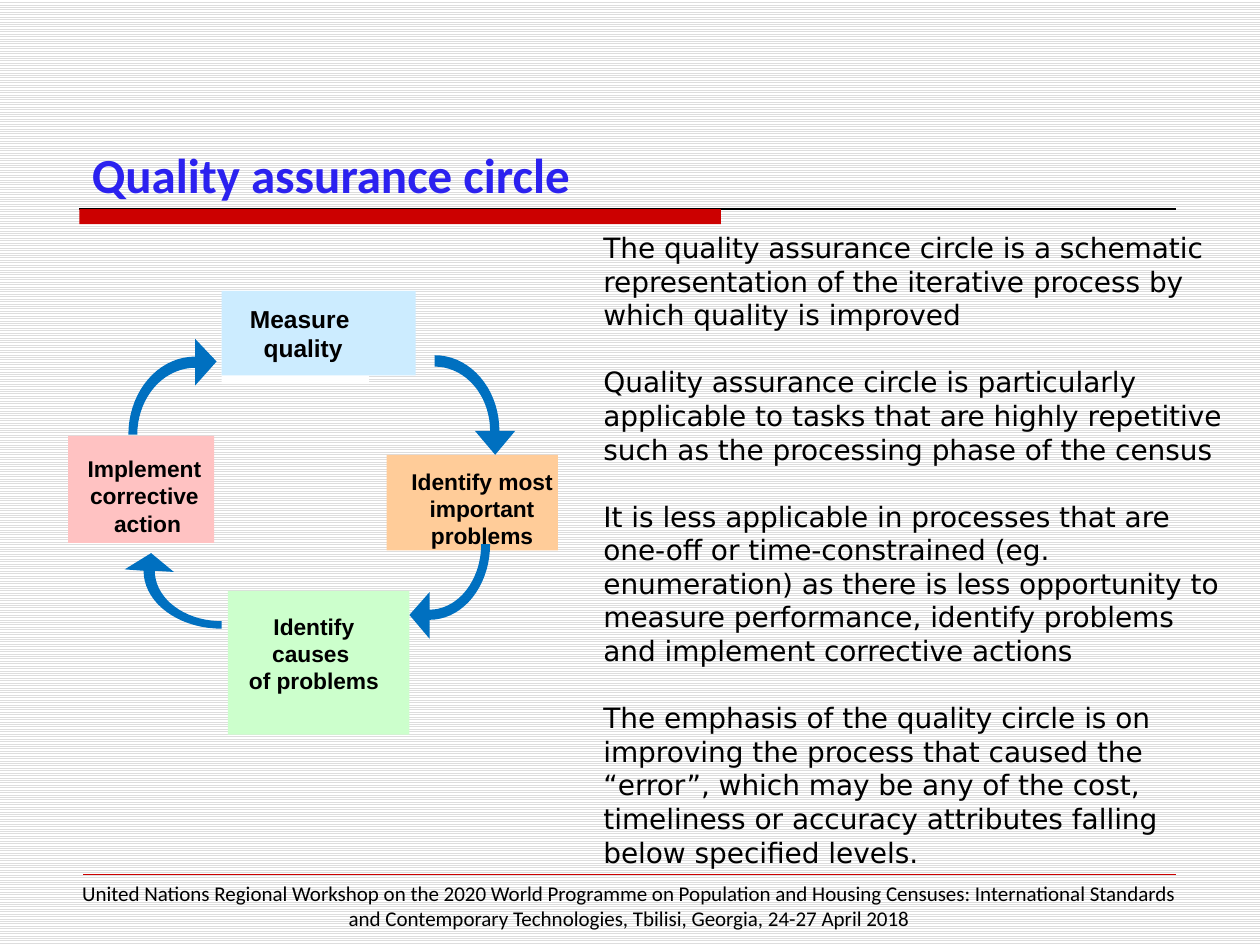
from dataclasses import dataclass
from math import cos, radians, sin

from lxml.etree import SubElement
from pptx import Presentation
from pptx.dml.color import RGBColor
from pptx.enum.dml import MSO_PATTERN
from pptx.enum.shapes import MSO_CONNECTOR, MSO_SHAPE
from pptx.enum.text import MSO_ANCHOR, PP_ALIGN
from pptx.oxml.ns import qn
from pptx.util import Pt


@dataclass(frozen=True)
class Theme:
    title_color: str = "2B21EF"
    text_color: str = "000000"
    accent: str = "CC0000"
    rule: str = "000000"
    arrow: str = "0070C0"
    paper: str = "FFFFFF"
    stripe: str = "DDDDDD"
    measure: str = "CCECFF"
    problems: str = "FFCC99"
    causes: str = "CCFFCC"
    action: str = "FFC2C2"
    title_size: float = 28
    body_size: float = 16
    footer_size: float = 12
    step_size: float = 13
    first_step_size: float = 14
    heading_font: str = "Calibri"
    step_font: str = "Arial"
    body_font: str = "DejaVu Sans"


THEME = Theme()

BODY = [
    "The quality assurance circle is a schematic representation of the iterative "
    "process by which quality is improved",
    "Quality assurance circle is particularly applicable to tasks that are highly "
    "repetitive such as the processing phase of the census",
    "It is less applicable in processes that are one-off or time-constrained (eg. "
    "enumeration) as there is less opportunity to measure performance, identify "
    "problems and implement corrective actions",
    "The emphasis of the quality circle is on improving the process that caused the "
    "“error”, which may be any of the cost, timeliness or accuracy attributes "
    "falling below specified levels.",
]
FOOTER = [
    "United Nations Regional Workshop on the 2020 World Programme on Population and "
    "Housing Censuses: International Standards",
    "and Contemporary Technologies, Tbilisi, Georgia, 24-27 April 2018",
]

# Box, fill, label box, label size, label lines
STEPS = [
    ((38.9, 249.1, 83.5, 61.2), THEME.action, (43.2, 259.9, 78.5, 47.5),
     THEME.step_size, ["Implement corrective", " action"]),
    ((221, 259.9, 97.9, 54.7), THEME.problems, (234, 267.1, 82.8, 47.5),
     THEME.step_size, ["Identify most important problems"]),
    ((130.3, 337.7, 103.7, 82.1), THEME.causes, (139, 349.9, 80.6, 47.5),
     THEME.step_size, ["Identify causes ", "of problems"]),
    ((126.7, 166.3, 110.9, 48.2), THEME.measure, (142.6, 173.5, 61.2, 33.8),
     THEME.first_step_size, ["Measure ", "quality"]),
]

# Start angle, centre, outer radii, inner radii, head corners from the outer side
ARROWS = [
    (-90, (248.4, 246.2), (37, 43.2), (31.7, 36.7),
     [(294.5, 246.2), (283, 259.9), (271.4, 246.2)]),
    (180, (111.6, 248.4), (38.2, 44.6), (33.1, 38.2),
     [(111.6, 193.7), (123.8, 206.6), (111.6, 220.3)]),
    (90, (126.7, 326.2), (44.6, 33.1), (38.2, 28.8),
     [(71.3, 325.4), (86.4, 316.1), (99.4, 326.9)]),
    (0, (245.5, 311), (34.6, 43.2), (29.5, 37.4),
     [(245.5, 365), (234, 351.4), (245.5, 338.4)]),
]


def rgb(color):
    return RGBColor.from_string(color)


def paint(shape, color):
    shape.shadow.inherit = False
    shape.fill.solid()
    shape.fill.fore_color.rgb = rgb(color)
    shape.line.fill.background()


def add_box(slide, frame, color):
    box = slide.shapes.add_shape(MSO_SHAPE.RECTANGLE, *map(Pt, frame))
    paint(box, color)


def add_rule(slide, left, right, y, color, width):
    rule = slide.shapes.add_connector(
        MSO_CONNECTOR.STRAIGHT, Pt(left), Pt(y), Pt(right), Pt(y))
    rule.line.color.rgb = rgb(color)
    rule.line.width = Pt(width)
    SubElement(rule._element.spPr, qn("a:effectLst"))


def add_text(slide, frame, lines, font, size, color=THEME.text_color, bold=False,
             align=PP_ALIGN.LEFT, anchor=MSO_ANCHOR.TOP, inset=None, gap=0):
    """Add a text box; gap is the space in points between its paragraphs."""
    text = slide.shapes.add_textbox(*map(Pt, frame)).text_frame
    text.word_wrap = True
    text.vertical_anchor = anchor
    if inset is not None:
        text.margin_left = text.margin_right = Pt(inset)
        text.margin_top = text.margin_bottom = Pt(inset)
    text.text = "\n".join(lines)
    for index, paragraph in enumerate(text.paragraphs):
        paragraph.alignment = align
        if gap and index:
            paragraph.space_before = Pt(gap)
        for run in paragraph.runs:
            run.font.name = font
            run.font.size = Pt(size)
            run.font.bold = bold
            run.font.color.rgb = rgb(color)


def quarter_arc(center, radii, start):
    """Points of a clockwise quarter ellipse."""
    angles = [radians(start + step) for step in range(0, 91, 5)]
    return [(center[0] + radii[0] * cos(a), center[1] + radii[1] * sin(a))
            for a in angles]


def add_curved_arrow(slide, start, center, outer, inner, head):
    outline = (quarter_arc(center, outer, start) + head
               + quarter_arc(center, inner, start)[::-1])
    points = [(Pt(x), Pt(y)) for x, y in outline]
    builder = slide.shapes.build_freeform(*points[0])
    builder.add_line_segments(points[1:], close=True)
    paint(builder.convert_to_shape(), THEME.arrow)


def set_background(slide):
    fill = slide.background.fill
    fill.patterned()
    fill.pattern = MSO_PATTERN.LIGHT_HORIZONTAL
    fill.fore_color.rgb = rgb(THEME.stripe)
    fill.back_color.rgb = rgb(THEME.paper)


def add_frame(slide):
    """Add the title with its bar, and the footer with its rule."""
    add_rule(slide, 45.4, 671.8, 119.5, THEME.rule, 0.75)
    add_box(slide, (45.4, 119.5, 366.5, 8.6), THEME.accent)
    add_rule(slide, 47.5, 671.8, 499.7, THEME.accent, 0.25)
    add_text(slide, (8.6, 499.7, 702, 36), FOOTER, THEME.heading_font,
             THEME.footer_size, align=PP_ALIGN.CENTER)
    add_text(slide, (45.4, 85, 630, 34.6), ["Quality assurance circle"],
             THEME.heading_font, THEME.title_size, THEME.title_color, bold=True,
             anchor=MSO_ANCHOR.BOTTOM)


def add_circle(slide):
    add_box(slide, (126.7, 178.6, 84.2, 41), THEME.paper)
    for box, color, label_box, size, lines in STEPS:
        add_box(slide, box, color)
        add_text(slide, label_box, lines, THEME.step_font, size, bold=True,
                 align=PP_ALIGN.CENTER, inset=0)
    for arrow in ARROWS:
        add_curved_arrow(slide, *arrow)


def main():
    deck = Presentation()
    deck.slide_width, deck.slide_height = Pt(720), Pt(540)
    slide = deck.slides.add_slide(deck.slide_layouts[6])
    set_background(slide)
    add_frame(slide)
    add_circle(slide)
    add_text(slide, (337.7, 128.2, 373.7, 375.8), BODY, THEME.body_font,
             THEME.body_size, gap=19.2)
    deck.save("out.pptx")


if __name__ == "__main__":
    main()
